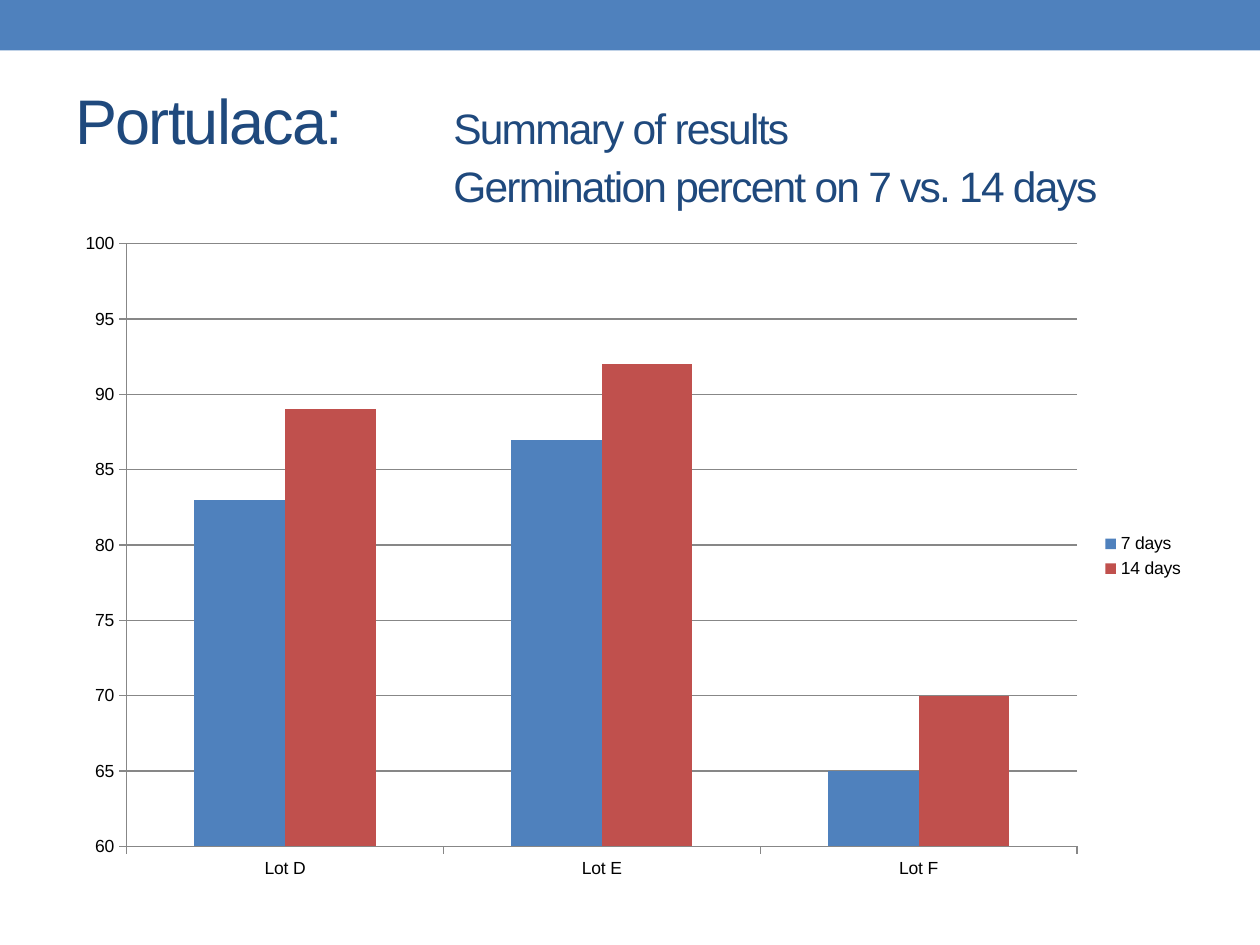
from pptx import Presentation
from pptx.chart.data import CategoryChartData
from pptx.dml.color import RGBColor
from pptx.enum.chart import XL_CHART_TYPE as ChartType, XL_LEGEND_POSITION as LegendPos, XL_TICK_MARK as Tick
from pptx.enum.shapes import MSO_SHAPE as Shape
from pptx.enum.text import MSO_ANCHOR as Anchor
from pptx.oxml.ns import qn
from pptx.util import Inches, Pt
from lxml import etree

# Content
FONT = "Arial"
COLORS = {"band": "4F81BD", "title": "1F497D", "text": "000000", "grid": "878787"}
TITLE_LINES = [
    [("Portulaca:", 36), ("\tSummary of results", 24.3)],
    [("\tGermination percent on 7 vs. 14 days", 24.3)],
]
LOTS = ["Lot D", "Lot E", "Lot F"]
GERMINATION = [
    ("7 days", (83, 87, 65), "4F81BD"),
    ("14 days", (89, 92, 70), "C0504D"),
]


def rgb(name):
    return RGBColor.from_string(COLORS[name])


prs = Presentation()
prs.slide_width, prs.slide_height = Inches(10), Inches(7.5)
slide = prs.slides.add_slide(prs.slide_layouts[6])

# Top band
band = slide.shapes.add_shape(Shape.RECTANGLE, 0, 0, prs.slide_width, Inches(0.4))
band.shadow.inherit = False
band.fill.solid()
band.fill.fore_color.rgb = rgb("band")
band.line.fill.background()

# Title, with the summary aligned on a tab stop
title = slide.shapes.add_textbox(Inches(0.5), Inches(0.62), Inches(9), Inches(1.08)).text_frame
title.word_wrap = True
title.vertical_anchor = Anchor.MIDDLE
for number, line in enumerate(TITLE_LINES):
    paragraph = title.add_paragraph() if number else title.paragraphs[0]
    paragraph.space_before = Pt(2 * number)
    paragraph.font.name = FONT
    paragraph.font.color.rgb = rgb("title")
    tabs = etree.Element(qn("a:tabLst"))
    etree.SubElement(tabs, qn("a:tab"), pos=str(Inches(3)), algn="l")
    paragraph.font._element.addprevious(tabs)
    for text, size in line:
        run = paragraph.add_run()
        run.text = text
        run.font.size = Pt(size)
        run.font._element.set("spc", "-100")

# Germination chart
data = CategoryChartData()
data.categories = LOTS
for name, values, _ in GERMINATION:
    data.add_series(name, values)
chart = slide.shapes.add_chart(
    ChartType.COLUMN_CLUSTERED, Inches(0.5), Inches(1.75), Inches(9), Inches(5.33), data
).chart
chart.has_title = False
chart.font.name = FONT
chart.font.size = Pt(10)
chart.font.color.rgb = rgb("text")
chart.has_legend = True
chart.legend.position = LegendPos.RIGHT
chart.legend.include_in_layout = False

# Bars
plot = chart.plots[0]
plot.gap_width = 150
plot.overlap = 0
plot.vary_by_categories = False
for series, (_, _, color) in zip(plot.series, GERMINATION):
    series.format.fill.solid()
    series.format.fill.fore_color.rgb = RGBColor.from_string(color)
    series.invert_if_negative = False

# Axes and gridlines
percent = chart.value_axis
percent.minimum_scale, percent.maximum_scale, percent.major_unit = 60, 100, 5
percent.has_major_gridlines = True
for axis in (percent, chart.category_axis):
    axis.major_tick_mark = Tick.OUTSIDE
    axis.minor_tick_mark = Tick.NONE
for ruled in (percent, chart.category_axis, percent.major_gridlines):
    ruled.format.line.color.rgb = rgb("grid")
    ruled.format.line.width = Pt(0.75)

prs.save("out.pptx")
